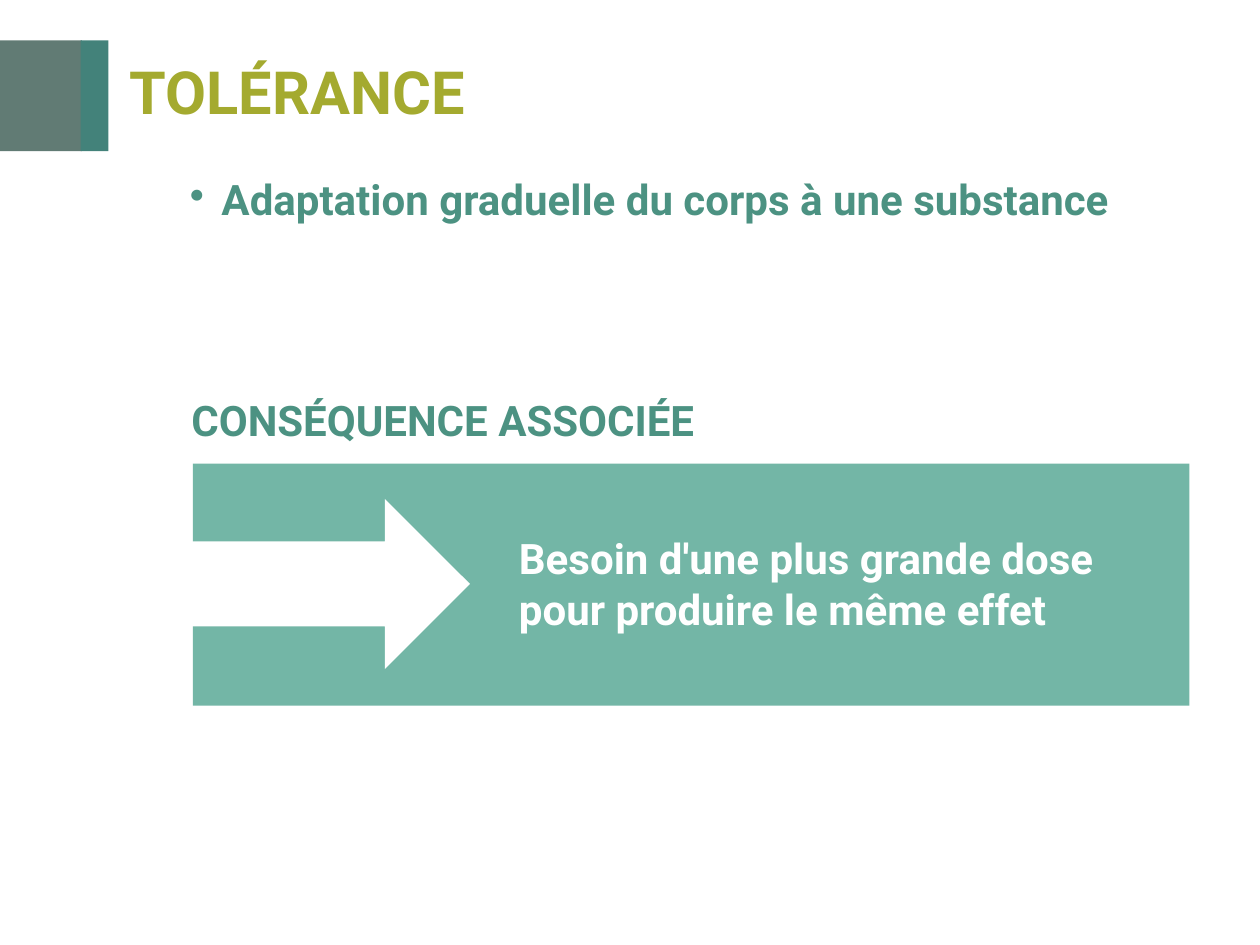
import pptx
import pptx.util
import pptx.dml.color
import pptx.enum.shapes
import pptx.enum.text
import pptx.oxml.ns
from lxml import etree

Inches = pptx.util.Inches
SHAPE = pptx.enum.shapes.MSO_SHAPE
ANCHOR = pptx.enum.text.MSO_ANCHOR
qn = pptx.oxml.ns.qn

TITLE = "TOLÉRANCE"
DEFINITION = "Adaptation graduelle du corps à une substance"
HEADING = "CONSÉQUENCE ASSOCIÉE"
CONSEQUENCE = "Besoin d'une plus grande dose pour produire le même effet"

THEME = {
    "font": "Roboto",
    "title_size": 34, "body_size": 24,
    "title": "A4AA2F", "body": "4C9282", "white": "FFFFFF",
    "panel": "73B6A6", "tab": "43827A", "tab_dark": "0D352A",
}

# Left, top, width, height in inches
TITLE_BOX = (0.93, 0.25, 8.82, 1.03)
DEFINITION_BOX = (1.41, 1.36, 8.33, 0.97)
HEADING_BOX = (1.42, 3.08, 4.7, 0.5)
CONSEQUENCE_BOX = (4.02, 3.8, 5.28, 1.66)

# Preset, box, colour, opacity in percent
SHAPES = [
    (SHAPE.RECTANGLE, (0, 0.32, 0.65, 0.88), "tab_dark", 65),
    (SHAPE.RECTANGLE, (0.64, 0.32, 0.22, 0.88), "tab", 100),
    (SHAPE.RECTANGLE, (1.53, 3.68, 7.91, 1.92), "panel", 100),
    (SHAPE.RIGHT_ARROW, (1.51, 3.96, 2.22, 1.35), "white", 100),
]


def rgb(name):
    return pptx.dml.color.RGBColor.from_string(THEME[name])


def add_filled(s, preset, box, color, opacity):
    sp = s.shapes.add_shape(preset, *map(Inches, box))
    sp.shadow.inherit = False
    sp.line.fill.background()
    sp.fill.solid()
    sp.fill.fore_color.rgb = rgb(color)
    if opacity < 100:
        clr = sp.fill._xPr.find(".//" + qn("a:srgbClr"))
        etree.SubElement(clr, qn("a:alpha"), val=str(opacity * 1000))


def add_bullet(p, indent):
    pPr = p._p.get_or_add_pPr()
    pPr.set("marL", str(Inches(indent)))
    pPr.set("indent", str(-Inches(indent)))
    etree.SubElement(pPr, qn("a:buChar"), char="•")


def write(sp, text, color="body", size="body_size", anchor=ANCHOR.TOP,
          wrap=True, spacing=None, bullet=None):
    tf = sp.text_frame
    tf.word_wrap = wrap
    tf.vertical_anchor = anchor
    tf.auto_size = pptx.enum.text.MSO_AUTO_SIZE.NONE
    p = tf.paragraphs[0]
    p.alignment = pptx.enum.text.PP_ALIGN.LEFT
    if spacing:
        p.line_spacing = spacing
    if bullet:
        add_bullet(p, bullet)
    r = p.add_run()
    r.text = text
    r.font.name = THEME["font"]
    r.font.size = pptx.util.Pt(THEME[size])
    r.font.bold = True
    r.font.color.rgb = rgb(color)


def add_text(s, box, text, **fmt):
    write(s.shapes.add_textbox(*map(Inches, box)), text, **fmt)


def main():
    prs = pptx.Presentation()
    prs.slide_width, prs.slide_height = Inches(10), Inches(7.5)
    s = prs.slides.add_slide(prs.slide_layouts[5])

    for shape in SHAPES:
        add_filled(s, *shape)

    title = s.shapes.title
    title.left, title.top, title.width, title.height = map(Inches, TITLE_BOX)
    write(title, TITLE, color="title", size="title_size",
          anchor=ANCHOR.MIDDLE, spacing=0.85)

    add_text(s, DEFINITION_BOX, DEFINITION, spacing=0.95, bullet=0.25)
    add_text(s, HEADING_BOX, HEADING, wrap=False)
    add_text(s, CONSEQUENCE_BOX, CONSEQUENCE, color="white",
             anchor=ANCHOR.MIDDLE)

    prs.save("out.pptx")


if __name__ == "__main__":
    main()
